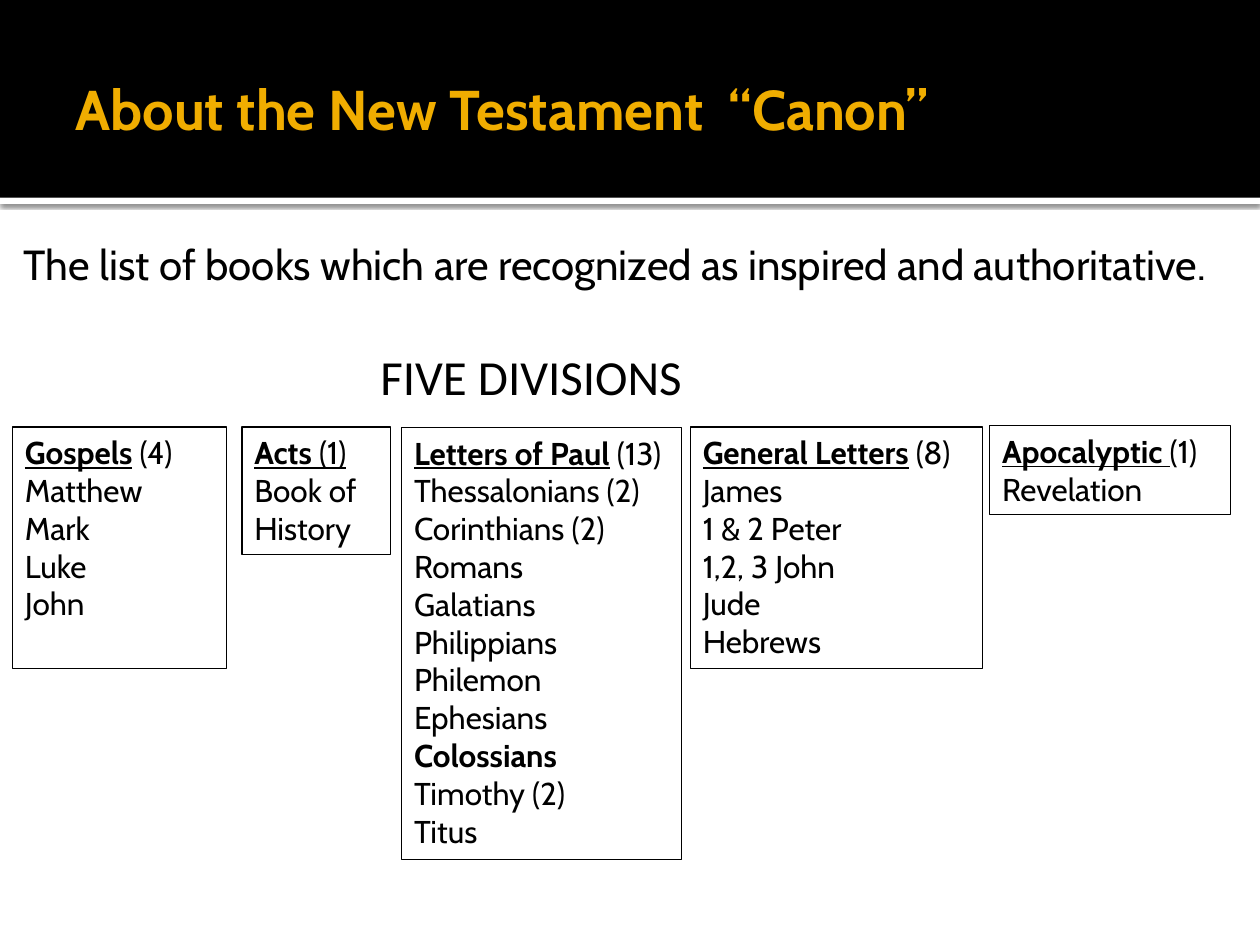
import pptx
import pptx.util
import pptx.dml.color
import pptx.enum.shapes
import pptx.enum.text
import lxml.etree

Pt = pptx.util.Pt
COLORS = {"black": "000000", "white": "FFFFFF", "gold": "F0AD00"}


def rgb(name):
    return pptx.dml.color.RGBColor.from_string(COLORS[name])


def add_span(para, text, size=18, font="Cabin", color="black", bold=False, underline=False):
    span = para.add_run()
    span.text = text
    span.font.size = Pt(size)
    span.font.name = font
    span.font.color.rgb = rgb(color)
    span.font.bold = bold
    span.font.underline = underline


deck = pptx.Presentation()
deck.slide_width, deck.slide_height = Pt(720), Pt(540)
page = deck.slides.add_slide(deck.slide_layouts[5])

# Header: white strip with a soft shadow, then the black band
for top, height, color in [(113, 3.6, "white"), (0, 113, "black")]:
    band = page.shapes.add_shape(
        pptx.enum.shapes.MSO_SHAPE.RECTANGLE, Pt(0), Pt(top), Pt(720), Pt(height))
    band.shadow.inherit = False
    band.fill.solid()
    band.fill.fore_color.rgb = rgb(color)
    band.line.fill.background()
    if color == "white":
        effects = band._element.spPr.find(pptx.oxml.ns.qn("a:effectLst"))
        effects.append(lxml.etree.fromstring(
            '<a:outerShdw xmlns:a="http://schemas.openxmlformats.org/drawingml/2006/main"'
            ' blurRad="31750" dist="10160" dir="5400000" algn="tl" rotWithShape="0">'
            '<a:srgbClr val="000000"><a:alpha val="60000"/></a:srgbClr></a:outerShdw>'))

# Title, brought in front of the band
title = page.shapes.title
title.left, title.top, title.width, title.height = Pt(36), Pt(12.24), Pt(648), Pt(98.64)
page.shapes._spTree.append(title._element)
frame = title.text_frame
frame.vertical_anchor = pptx.enum.text.MSO_ANCHOR.MIDDLE
frame.margin_right = Pt(3.6)
frame.paragraphs[0].alignment = pptx.enum.text.PP_ALIGN.LEFT
add_span(frame.paragraphs[0], "About the New Testament  “Canon”", size=32, color="gold", bold=True)

# Definition and heading
for left, top, width, height, text, size, font in [
    (6.5, 133, 713.5, 40,
     "The list of books which are recognized as inspired and authoritative.", 24, "Cabin"),
    (210.24, 194.4, 222.48, 41, "FIVE DIVISIONS", 28, "Calibri"),
]:
    box = page.shapes.add_textbox(Pt(left), Pt(top), Pt(width), Pt(height))
    box.text_frame.word_wrap = True
    add_span(box.text_frame.paragraphs[0], text, size=size, font=font)

# Five divisions: left, top, width, height, name, count, count underlined, books
divisions = [
    (7.2, 244, 122.4, 138.2, "Gospels", " (4)", False,
     ["Matthew", "Mark", "Luke", "John"]),
    (138.24, 244, 85, 72.7, "Acts ", "(1)", True, ["Book of History"]),
    (229.5, 244.2, 159.8, 247, "Letters of Paul", " (13)", False,
     ["Thessalonians (2)", "Corinthians (2)", "Romans", "Galatians", "Philippians",
      "Philemon", "Ephesians", "Colossians", "Timothy (2)", "Titus"]),
    (394.5, 244, 167, 138.2, "General Letters", " (8)", False,
     ["James", "1 & 2 Peter", "1,2, 3 John", "Jude", "Hebrews"]),
    (565.5, 243.2, 137.5, 51, "Apocalyptic ", "(1)", False, ["Revelation"]),
]
for left, top, width, height, name, count, underlined, books in divisions:
    box = page.shapes.add_textbox(Pt(left), Pt(top), Pt(width), Pt(height))
    box.line.color.rgb = rgb("black")
    box.line.width = Pt(0.75)
    frame = box.text_frame
    frame.word_wrap = True
    add_span(frame.paragraphs[0], name, bold=True, underline=True)
    add_span(frame.paragraphs[0], count, underline=underlined)
    for book in books:
        add_span(frame.add_paragraph(), book, bold=book == "Colossians")

deck.save("out.pptx")
